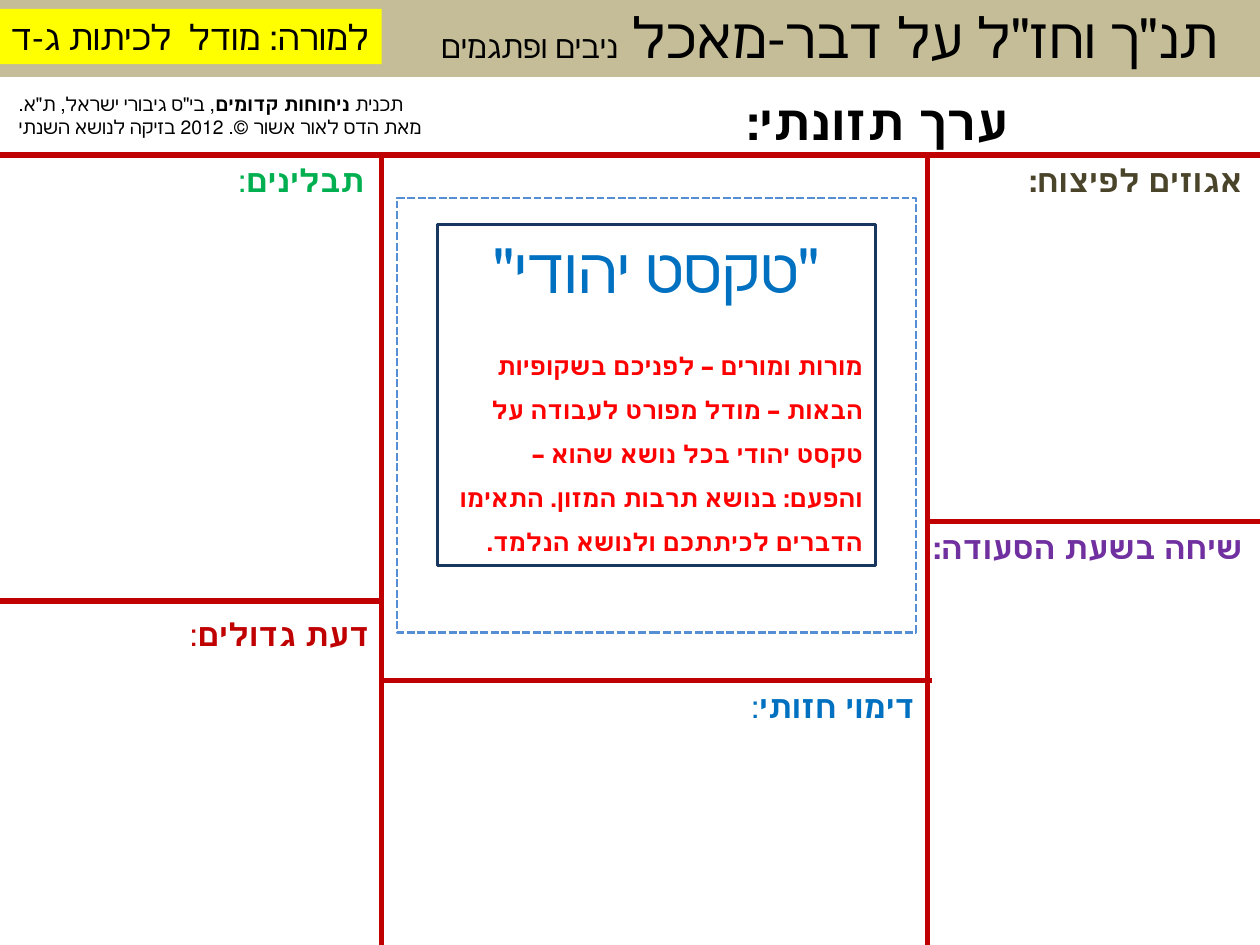
from lxml import etree
from pptx import Presentation
from pptx.dml.color import RGBColor
from pptx.enum.dml import MSO_LINE_DASH_STYLE as Dash
from pptx.enum.lang import MSO_LANGUAGE_ID as Language
from pptx.enum.shapes import MSO_CONNECTOR as Connector, MSO_SHAPE as Shape
from pptx.enum.text import MSO_ANCHOR as Anchor, PP_ALIGN as Align
from pptx.oxml.ns import qn
from pptx.util import Inches, Pt

FONT = "Calibri"
BLACK = RGBColor(0x00, 0x00, 0x00)
WHITE = RGBColor(0xFF, 0xFF, 0xFF)
TAN = RGBColor(0xC4, 0xBD, 0x97)
YELLOW = RGBColor(0xFF, 0xFF, 0x00)
DARK_RED = RGBColor(0xC0, 0x00, 0x00)
RED = RGBColor(0xFF, 0x00, 0x00)
BLUE = RGBColor(0x00, 0x70, 0xC0)
LIGHT_BLUE = RGBColor(0x55, 0x8E, 0xD5)
NAVY = RGBColor(0x17, 0x37, 0x5E)
GREEN = RGBColor(0x00, 0xB0, 0x50)
PURPLE = RGBColor(0x70, 0x30, 0xA0)
OLIVE = RGBColor(0x4A, 0x45, 0x2A)

# Shared edges of the page grid
LEFT_RULE, RIGHT_RULE = 3.03, 7.36
TOP_RULE, BOTTOM = 1.23, 7.57
OPINION_RULE, TALK_RULE, IMAGE_RULE = 4.77, 4.14, 5.4


def add_run(paragraph, text, size, color=BLACK, bold=False):
    run = paragraph.add_run()
    run.text = text
    font = run.font
    font.name, font.size, font.bold = FONT, Pt(size), bold
    font.color.rgb = color
    font.language_id = Language.HEBREW


def write(paragraph, *runs, align=Align.RIGHT, spacing=None, after=None):
    """Fill a right-to-left paragraph; each run is (text, size, color, bold)."""
    paragraph.alignment = align
    paragraph._p.get_or_add_pPr().set("rtl", "1")
    if spacing:
        paragraph.line_spacing = spacing
    if after:
        paragraph.space_after = Pt(after)
    for run in runs:
        add_run(paragraph, *run)


def add_text(slide, left, top, width, height, *runs, **paragraph_format):
    box = slide.shapes.add_textbox(*map(Inches, (left, top, width, height)))
    frame = box.text_frame
    frame.word_wrap = True
    write(frame.paragraphs[0], *runs, **paragraph_format)
    return frame


def add_panel(slide, left, top, width, height, fill=None, line=None, dash=None):
    panel = slide.shapes.add_shape(
        Shape.RECTANGLE, *map(Inches, (left, top, width, height)))
    panel.shadow.inherit = False
    if fill is None:
        panel.fill.background()
    else:
        panel.fill.solid()
        panel.fill.fore_color.rgb = fill
    if line is None:
        panel.line.fill.background()
    else:
        panel.line.color.rgb = line
        panel.line.width = Pt(1.5)
        if dash is not None:
            panel.line.dash_style = dash
    frame = panel.text_frame
    frame.word_wrap = True
    frame.vertical_anchor = Anchor.TOP
    return frame


def add_rule(slide, x1, y1, x2, y2):
    rule = slide.shapes.add_connector(
        Connector.STRAIGHT, *map(Inches, (x1, y1, x2, y2)))
    rule.line.color.rgb = DARK_RED
    rule.line.width = Pt(3)
    etree.SubElement(rule._element.spPr, qn("a:effectLst"))


def add_header(slide):
    add_panel(slide, 0, -0.03, 10, 0.64, fill=TAN)
    add_text(slide, 2.09, -0.03, 7.68, 0.64,
             ('תנ"ך וחז"ל על דבר-מאכל ', 32), ("ניבים ופתגמים", 18))
    add_text(slide, 3.32, 0.68, 4.78, 0.57, ("ערך תזונתי:", 28, BLACK, True))
    teacher_note = add_panel(slide, -0.04, 0.07, 3.07, 0.44, fill=YELLOW)
    write(teacher_note.paragraphs[0], ("למורה: מודל  לכיתות ג-ד", 20))
    credits = add_text(slide, 0.05, 0.68, 4.17, 0.47,
                       ("תכנית ", 11), ("ניחוחות קדומים", 11, BLACK, True),
                       (', בי"ס גיבורי ישראל, ת"א.', 11), align=Align.LEFT)
    write(credits.add_paragraph(),
          ("מאת הדס לאור אשור ©. 2012 בזיקה לנושא השנתי", 11),
          align=Align.LEFT)


def add_sections(slide):
    sections = [
        (0, 4.83, 3.03, 2.83, "דעת גדולים", ": ", DARK_RED, Align.RIGHT),
        (7.4, TOP_RULE, 2.56, 0.81, "אגוזים לפיצוח: ", "", OLIVE, Align.RIGHT),
        (7.28, TALK_RULE, 2.68, 0.61, "שיחה בשעת הסעודה: ", "", PURPLE,
         Align.RIGHT),
        (LEFT_RULE, IMAGE_RULE, 4.33, 1.41, "דימוי חזותי", ": ", BLUE,
         Align.RIGHT),
        (0, TOP_RULE, 2.99, 0.4, "תבלינים", ": ", GREEN, Align.JUSTIFY),
    ]
    for left, top, width, height, heading, colon, color, align in sections:
        runs = [(heading, 18, color, True)]
        if colon:
            runs.append((colon, 18, color))
        add_text(slide, left, top, width, height, *runs, align=align)


def add_center(slide):
    add_panel(slide, 3.15, 1.57, 4.12, 3.45, fill=WHITE, line=LIGHT_BLUE,
              dash=Dash.SQUARE_DOT)
    source_text = add_panel(slide, 3.47, 1.78, 3.48, 2.71, line=NAVY)
    write(source_text.paragraphs[0], ('"טקסט יהודי"', 36, BLUE),
          align=Align.CENTER, after=17)
    write(source_text.add_paragraph(),
          ("מורות ומורים – לפניכם בשקופיות הבאות – מודל מפורט לעבודה על "
           "טקסט יהודי בכל נושא שהוא – והפעם: בנושא תרבות המזון. התאימו "
           "הדברים לכיתתכם ולנושא הנלמד. ", 14, RED, True), spacing=1.5)


def main():
    deck = Presentation()
    deck.slide_width, deck.slide_height = Inches(10), Inches(7.5)
    slide = deck.slides.add_slide(deck.slide_layouts[6])
    add_header(slide)
    for ends in [
        (-0.12, TOP_RULE, 10, TOP_RULE),
        (RIGHT_RULE, BOTTOM, RIGHT_RULE, TOP_RULE),
        (LEFT_RULE, BOTTOM, LEFT_RULE, TOP_RULE),
        (-0.04, OPINION_RULE, LEFT_RULE, OPINION_RULE),
        (RIGHT_RULE, TALK_RULE, 10.16, TALK_RULE),
        (LEFT_RULE, IMAGE_RULE, 7.4, IMAGE_RULE),
    ]:
        add_rule(slide, *ends)
    add_sections(slide)
    add_center(slide)
    deck.save("out.pptx")


if __name__ == "__main__":
    main()
